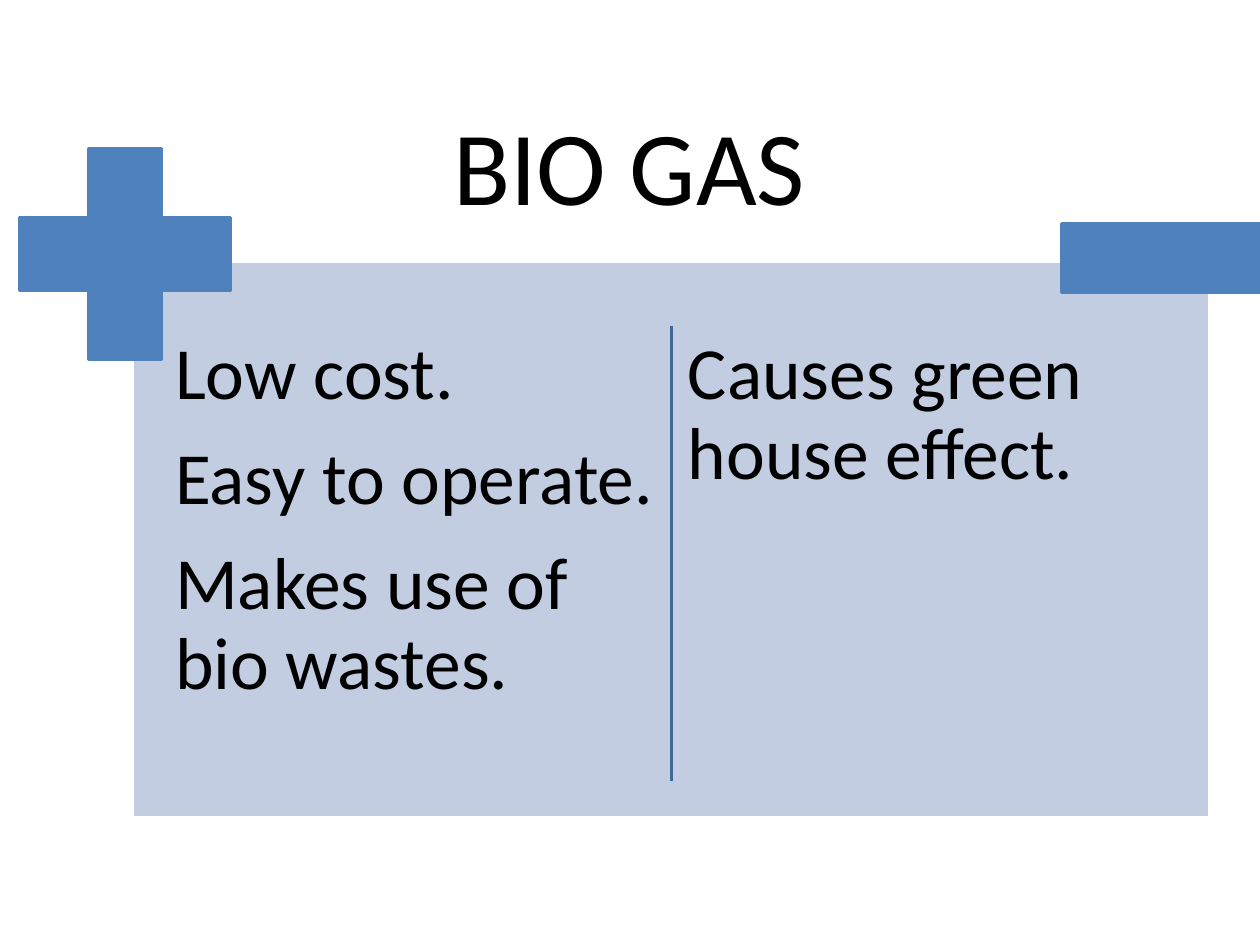
from dataclasses import dataclass

from lxml.etree import SubElement
from pptx import Presentation
from pptx.dml.color import RGBColor
from pptx.enum.shapes import MSO_CONNECTOR, MSO_SHAPE
from pptx.enum.text import MSO_ANCHOR, PP_ALIGN
from pptx.oxml.ns import qn
from pptx.util import Inches, Pt

ACCENT = "4F81BD"
PANEL = "C2CDE1"
DIVIDER = "3F6797"
WHITE = "FFFFFF"
BLACK = "000000"


@dataclass(frozen=True)
class Box:
    left: float
    top: float
    width: float
    height: float

    def lengths(self) -> tuple:
        return tuple(map(Inches, (self.left, self.top, self.width, self.height)))


@dataclass(frozen=True)
class Block:
    box: Box
    fill: str
    outline: str
    preset: MSO_SHAPE = MSO_SHAPE.RECTANGLE
    adjustment: float | None = None


@dataclass(frozen=True)
class Passage:
    box: Box
    lines: tuple[str, ...]
    size: int
    margin: float
    paragraph_format: dict


def colour(value: str) -> RGBColor:
    return RGBColor.from_string(value)


def draw_block(slide, block: Block) -> None:
    shape = slide.shapes.add_shape(block.preset, *block.box.lengths())
    shape.shadow.inherit = False
    shape.fill.solid()
    shape.fill.fore_color.rgb = colour(block.fill)
    shape.line.color.rgb = colour(block.outline)
    shape.line.width = Pt(2)
    if block.adjustment is not None:
        shape.adjustments[0] = block.adjustment


def draw_passage(slide, passage: Passage) -> None:
    frame = slide.shapes.add_textbox(*passage.box.lengths()).text_frame
    frame.word_wrap = True
    frame.vertical_anchor = MSO_ANCHOR.TOP
    for side in ("left", "top", "right", "bottom"):
        setattr(frame, f"margin_{side}", Inches(passage.margin))
    frame.text = "\n".join(passage.lines)
    for paragraph in frame.paragraphs:
        for name, value in passage.paragraph_format.items():
            setattr(paragraph, name, value)
        font = paragraph.runs[0].font
        font.name = "Calibri"
        font.size = Pt(passage.size)
        font.color.rgb = colour(BLACK)


def draw_divider(slide, x: float, top: float, bottom: float) -> None:
    divider = slide.shapes.add_connector(
        MSO_CONNECTOR.STRAIGHT, Inches(x), Inches(top), Inches(x), Inches(bottom)
    )
    divider.line.color.rgb = colour(DIVIDER)
    divider.line.width = Pt(2)
    SubElement(divider._element.spPr, qn("a:effectLst"))


BODY_FORMAT = {"line_spacing": 0.9, "space_after": Pt(14.6)}

PANEL_BLOCK = Block(Box(1.05, 2.07, 8.55, 4.42), PANEL, WHITE)
PLUS = Block(Box(0.16, 1.18, 1.67, 1.67), ACCENT, ACCENT, MSO_SHAPE.CROSS, 0.328)
MINUS = Block(Box(8.43, 1.78, 1.57, 0.54), ACCENT, ACCENT)
ADVANTAGES = Passage(
    Box(1.3, 2.58, 4.03, 3.78),
    ("Low cost.", "Easy to operate.", "Makes use of bio wastes."),
    42, 0.09, BODY_FORMAT,
)
DRAWBACKS = Passage(
    Box(5.37, 2.58, 3.97, 3.78), ("Causes green house effect.",), 42, 0.09, BODY_FORMAT
)
TITLE = Passage(
    Box(1.66, 0.75, 6.67, 1.11), ("BIO GAS",), 60, 0.05, {"alignment": PP_ALIGN.CENTER}
)


def main() -> None:
    deck = Presentation()
    deck.slide_width, deck.slide_height = Inches(10), Inches(7.5)
    slide = deck.slides.add_slide(deck.slide_layouts[6])
    draw_block(slide, PANEL_BLOCK)
    for passage in (ADVANTAGES, DRAWBACKS):
        draw_passage(slide, passage)
    for sign in (PLUS, MINUS):
        draw_block(slide, sign)
    draw_divider(slide, 5.33, 2.59, 6.2)
    draw_passage(slide, TITLE)
    deck.save("out.pptx")


if __name__ == "__main__":
    main()
